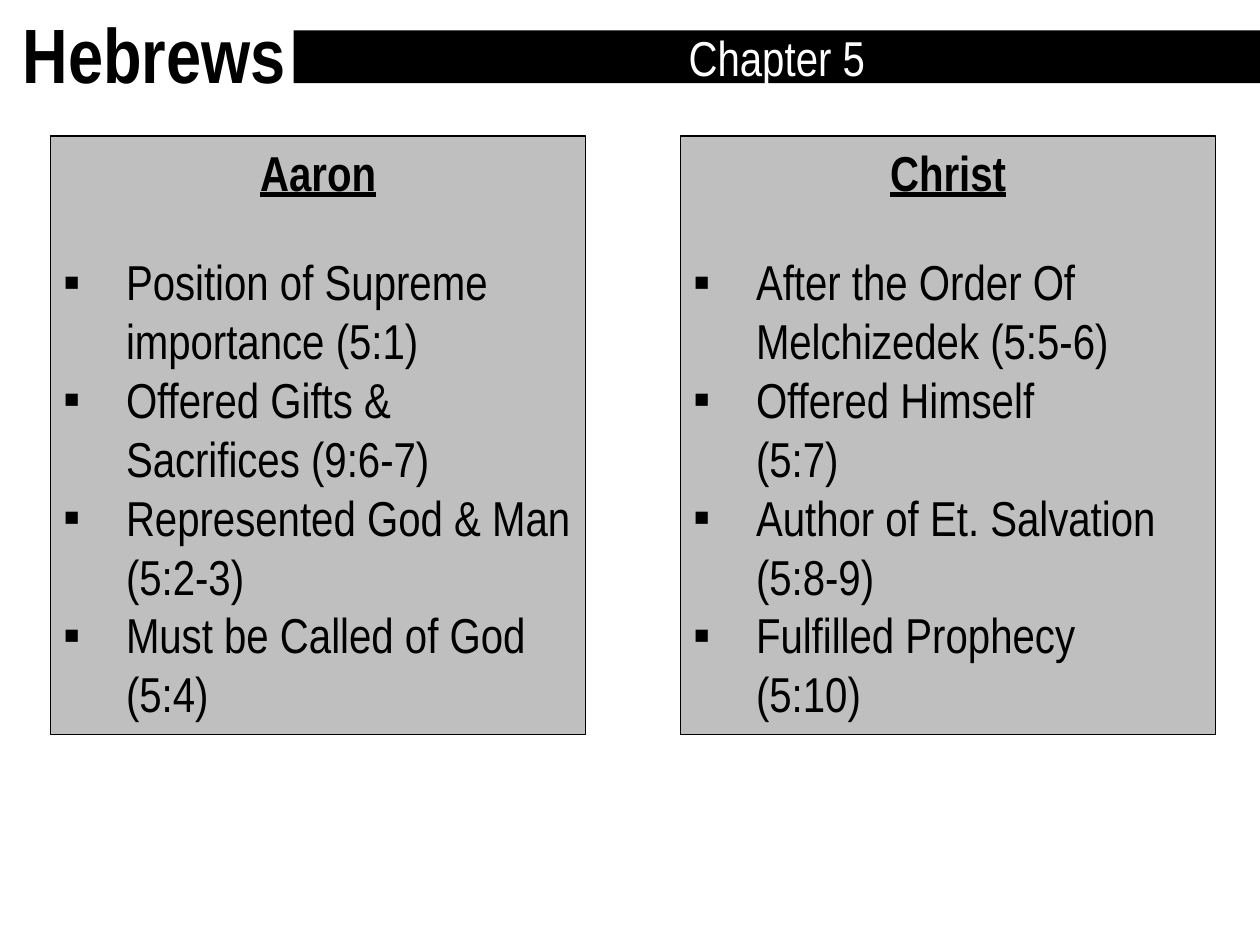
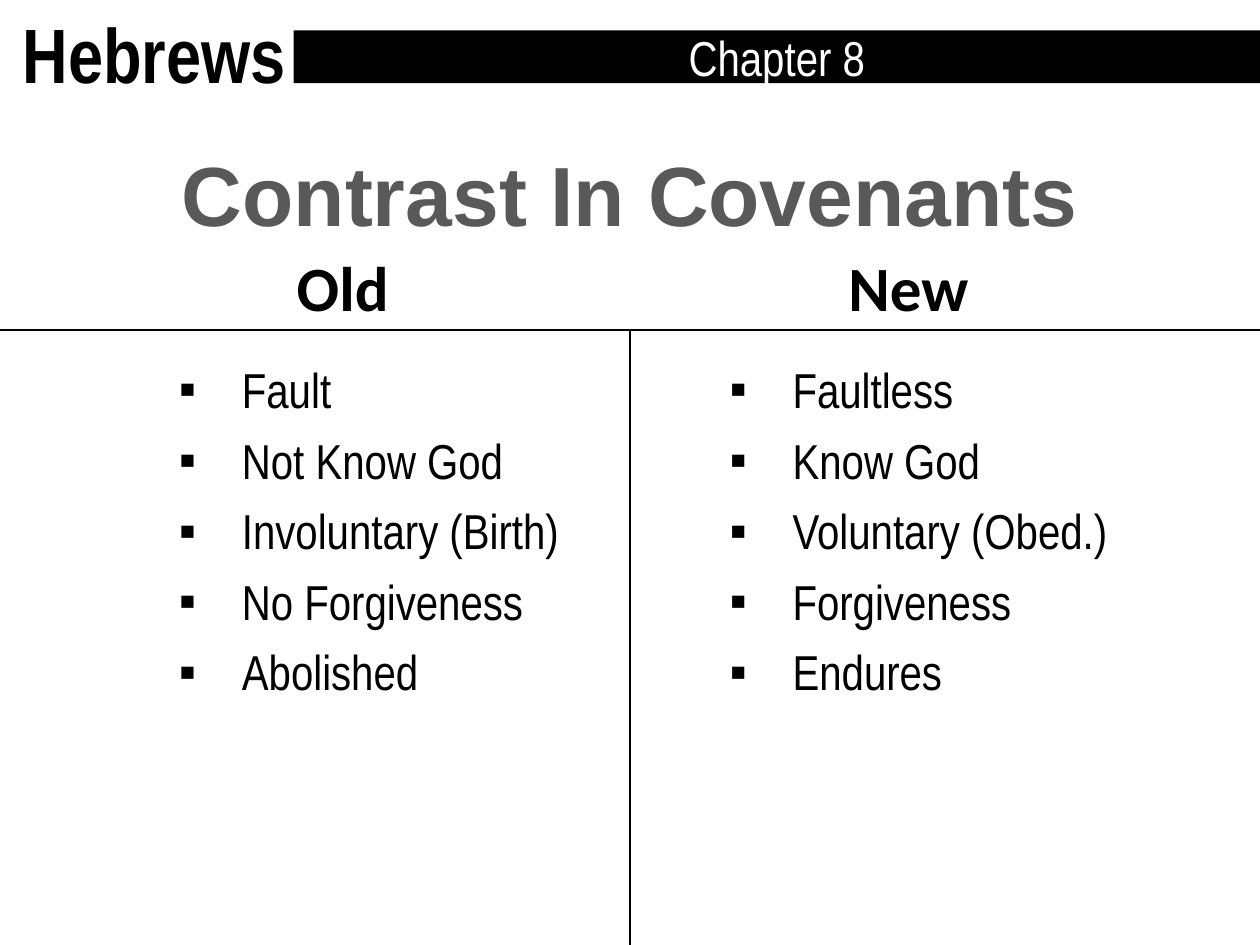
from dataclasses import dataclass

from lxml import etree
from pptx import Presentation
from pptx.dml.color import RGBColor
from pptx.enum.shapes import MSO_CONNECTOR, MSO_SHAPE
from pptx.enum.text import MSO_ANCHOR, MSO_AUTO_SIZE, PP_ALIGN
from pptx.oxml.ns import qn
from pptx.util import Inches, Pt

STRAIGHT = MSO_CONNECTOR.STRAIGHT
RECTANGLE = MSO_SHAPE.RECTANGLE
TOP, MIDDLE = MSO_ANCHOR.TOP, MSO_ANCHOR.MIDDLE
NO_FIT = MSO_AUTO_SIZE.NONE
LEFT, CENTER = PP_ALIGN.LEFT, PP_ALIGN.CENTER
TWO_CONTENT = 3


@dataclass(frozen=True)
class Theme:
    black: RGBColor = RGBColor(0x00, 0x00, 0x00)
    white: RGBColor = RGBColor(0xFF, 0xFF, 0xFF)
    panel: RGBColor = RGBColor(0xBF, 0xBF, 0xBF)
    headline: RGBColor = RGBColor(0x59, 0x59, 0x59)
    narrow: str = "Arial Narrow"
    wide: str = "Arial"
    label: str = "Calibri"
    title_size: Pt = Pt(44)
    headline_size: Pt = Pt(48)
    label_size: Pt = Pt(36)
    body_size: Pt = Pt(28)
    line_width: Pt = Pt(0.75)


THEME = Theme()
BODY_FONT = {"name": THEME.narrow, "size": THEME.body_size, "bold": False}
PANEL_FONT = BODY_FONT | {"bold": True, "underline": True}
TITLE_FONT = {"name": THEME.narrow, "size": THEME.title_size, "bold": True}
HEADLINE_FONT = {"name": THEME.wide, "size": THEME.headline_size, "bold": True}
LABEL_FONT = {"name": THEME.label, "size": THEME.label_size, "bold": True}

SLIDE_WIDTH, SLIDE_HEIGHT = 10, 7.5
RULE_TOP = 2.62
PANELS = [
    (0.4, "Aaron", [
        "Position of Supreme importance (5:1)",
        "Offered Gifts & Sacrifices (9:6-7)",
        "Represented God & Man (5:2-3)",
        "Must be Called of God (5:4)",
    ]),
    (5.4, "Christ", [
        "After the Order Of Melchizedek (5:5-6)",
        "Offered Himself\v(5:7)",
        "Author of Et. Salvation (5:8-9)",
        "Fulfilled Prophecy\v(5:10)",
    ]),
]
COVENANTS = [
    ("Old", 2.25, 0.94, 1.32, [
        "Fault", "Not Know God", "Involuntary (Birth)", "No Forgiveness", "Abolished",
    ]),
    ("New", 6.63, 1.16, 5.69, [
        "Faultless", "Know God", "Voluntary (Obed.)", "Forgiveness", "Endures",
    ]),
]


def set_values(target, values):
    for name, value in values.items():
        setattr(target, name, value)


def place(box, left, top, width, height):
    values = {"left": left, "top": top, "width": width, "height": height}
    set_values(box, {name: Inches(value) for name, value in values.items()})


def format_frame(frame, anchor=TOP, wrap=True):
    set_values(frame, {"word_wrap": wrap, "auto_size": NO_FIT, "vertical_anchor": anchor})


def write(para, text, font, color=THEME.black, align=LEFT, **spacing):
    para.text = text
    set_values(para, {"alignment": align, "space_before": Pt(0)} | spacing)
    for span in para.runs:
        set_values(span.font, font)
        span.font.color.rgb = color


def set_bullet(para, mark=None):
    """Give the paragraph a hanging bullet, or none when there is no mark."""
    hang = Inches(0.5) if mark else 0
    properties = para._p.get_or_add_pPr()
    properties.set("marL", str(hang))
    properties.set("indent", str(-hang))
    if mark:
        etree.SubElement(properties, qn("a:buFont"), typeface=THEME.wide)
        etree.SubElement(properties, qn("a:buChar"), char=mark)
    else:
        etree.SubElement(properties, qn("a:buNone"))


def fill_list(box, items, heading=None, line_spacing=1.0):
    frame = box.text_frame
    format_frame(frame)
    para = frame.paragraphs[0]
    if heading:
        set_bullet(para)
        write(para, heading, PANEL_FONT, align=CENTER, space_after=Pt(29))
        para = frame.add_paragraph()
    for number, item in enumerate(items):
        if number:
            para = frame.add_paragraph()
        set_bullet(para, "▪")
        write(para, item, BODY_FONT, line_spacing=line_spacing)


def add_text(page, text, bounds, font, color=THEME.black, wrap=True):
    box = page.shapes.add_textbox(*map(Inches, bounds))
    format_frame(box.text_frame, wrap=wrap)
    write(box.text_frame.paragraphs[0], text, font, color, CENTER)


def add_rule(page, *ends):
    rule = page.shapes.add_connector(STRAIGHT, *map(Inches, ends))
    rule.line.color.rgb = THEME.black
    rule.line.width = THEME.line_width
    etree.SubElement(rule._element.spPr, qn("a:effectLst"))


def add_page(deck, chapter):
    """Add a page with the book title and the chapter band."""
    page = deck.slides.add_slide(deck.slide_layouts[TWO_CONTENT])
    title = page.shapes.title
    place(title, 0.08, 0, 9.92, 0.84)
    format_frame(title.text_frame)
    write(title.text_frame.paragraphs[0], "Hebrews", TITLE_FONT)

    band = page.shapes.add_shape(RECTANGLE, *map(Inches, (2.33, 0.24, 7.67, 0.42)))
    band.shadow.inherit = False
    band.fill.solid()
    band.fill.fore_color.rgb = THEME.black
    band.line.fill.background()
    format_frame(band.text_frame, MIDDLE)
    write(band.text_frame.paragraphs[0], chapter, BODY_FONT, THEME.white, CENTER)
    return page


def add_priests_page(deck):
    page = add_page(deck, "Chapter 5")
    for index, (left, name, points) in enumerate(PANELS, start=1):
        panel = page.placeholders[index]
        place(panel, left, 1.08, 4.25, 4.75)
        panel.fill.solid()
        panel.fill.fore_color.rgb = THEME.panel
        panel.line.color.rgb = THEME.black
        panel.line.width = THEME.line_width
        fill_list(panel, points, heading=name)


def add_covenants_page(deck):
    page = add_page(deck, "Chapter 8")
    add_text(page, "Contrast In Covenants", (0, 1.08, SLIDE_WIDTH, 0.91),
             HEADLINE_FONT, THEME.headline)
    middle = SLIDE_WIDTH / 2
    add_rule(page, middle, RULE_TOP, middle, SLIDE_HEIGHT)
    add_rule(page, 0, RULE_TOP, SLIDE_WIDTH, RULE_TOP)
    for index, (name, left, width, list_left, points) in enumerate(COVENANTS, start=1):
        add_text(page, name, (left, 1.92, width, 0.71), LABEL_FONT, wrap=False)
        column = page.placeholders[index]
        place(column, list_left, 2.71, 3.25, 2.93)
        fill_list(column, points, line_spacing=1.2)


def main():
    deck = Presentation()
    deck.slide_width, deck.slide_height = Inches(SLIDE_WIDTH), Inches(SLIDE_HEIGHT)
    add_priests_page(deck)
    add_covenants_page(deck)
    deck.save("out.pptx")


if __name__ == "__main__":
    main()
